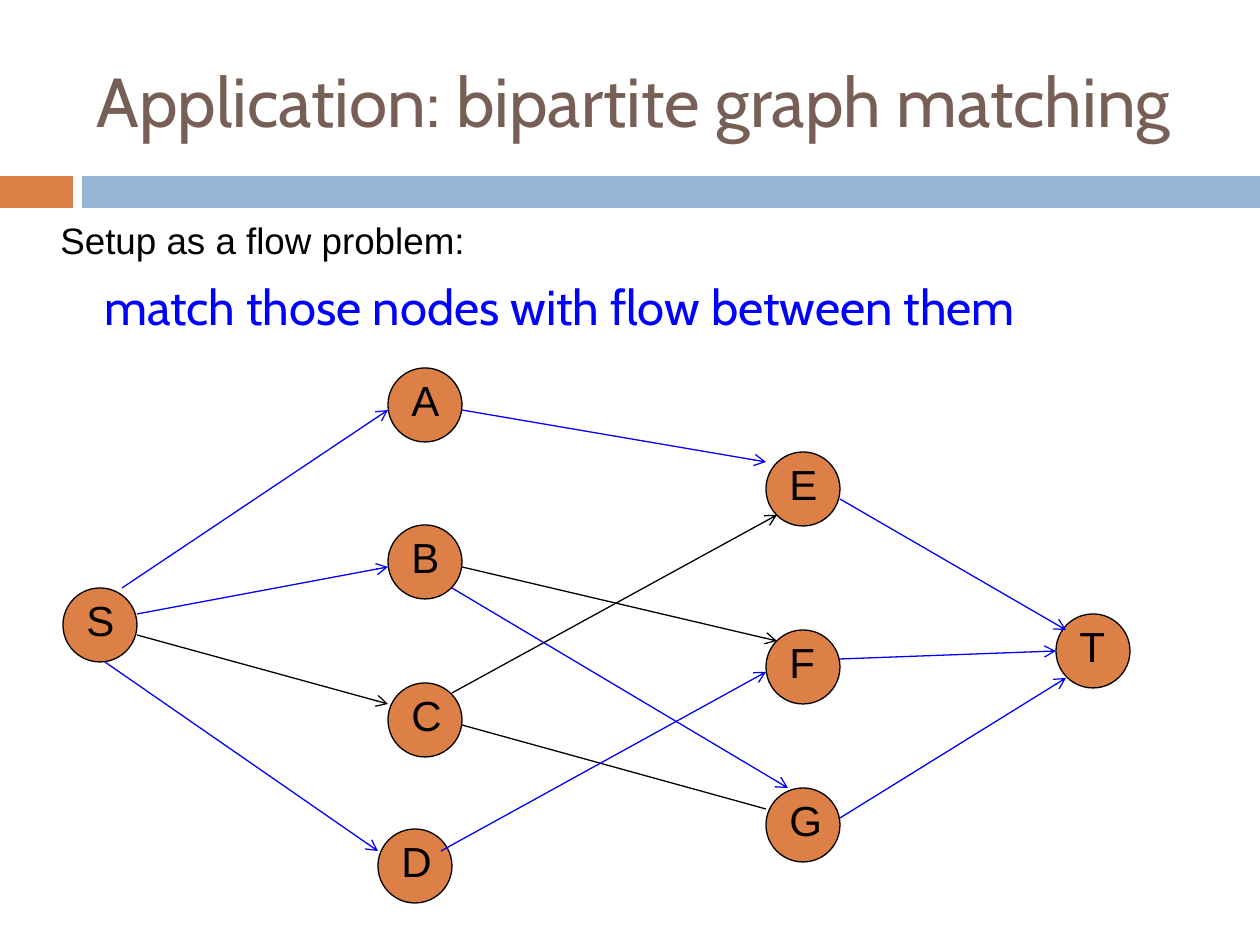
from pptx import Presentation
from pptx.dml.color import RGBColor
from pptx.enum.shapes import MSO_CONNECTOR, MSO_SHAPE
from pptx.enum.text import MSO_ANCHOR, MSO_AUTO_SIZE, PP_ALIGN
from pptx.oxml.ns import qn
from pptx.util import Pt
from lxml import etree

PX = 7257.14  # EMU per pixel, 126 pixels to the inch
OVAL, RECTANGLE = MSO_SHAPE.OVAL, MSO_SHAPE.RECTANGLE
STRAIGHT = MSO_CONNECTOR.STRAIGHT
TOP, MIDDLE = MSO_ANCHOR.TOP, MSO_ANCHOR.MIDDLE
LEFT, NO_AUTOFIT = PP_ALIGN.LEFT, MSO_AUTO_SIZE.NONE
TITLE_ONLY = 5

COLORS = {
    "orange": "DD8047",
    "band": "94B6D2",
    "title": "775F55",
    "black": "000000",
    "flow": "0000FF",
}

NODE_SIZE, LABEL_SIZE, LABEL_INSET = 74, 63, 11
NODES = {
    "A": (388, 368), "B": (388, 525), "C": (388, 683), "D": (378, 829),
    "E": (766, 452), "F": (766, 630), "G": (766, 788),
    "S": (63, 588), "T": (1056, 614),
}

# start, end, colour, has an arrowhead
EDGES = [
    # Source to the left side
    ((122, 588), (388, 410), "flow", True),
    ((137, 614), (388, 567), "flow", True),
    ((137, 635), (388, 704), "black", True),
    ((105, 662), (378, 851), "flow", True),
    # Left side to the right side
    ((462, 410), (766, 462), "flow", True),
    ((462, 567), (777, 641), "black", True),
    ((452, 588), (788, 788), "flow", True),
    ((452, 693), (777, 515), "black", True),
    ((462, 725), (766, 809), "black", False),
    ((441, 851), (766, 672), "flow", True),
    # Right side to the sink
    ((840, 499), (1066, 630), "flow", True),
    ((840, 659), (1056, 651), "flow", True),
    ((840, 818), (1066, 678), "flow", True),
]


def px(value):
    return round(value * PX)


def color(name):
    return RGBColor.from_string(COLORS[name])


def write_text(shape, text, size, font, color_name, anchor=TOP):
    frame = shape.text_frame
    frame.word_wrap = True
    frame.auto_size = NO_AUTOFIT
    frame.vertical_anchor = anchor
    paragraph = frame.paragraphs[0]
    paragraph.alignment = LEFT
    run = paragraph.add_run()
    run.text = text
    run.font.size = Pt(size)
    run.font.name = font
    run.font.color.rgb = color(color_name)
    return paragraph


def add_text(shapes, box, text, size, font, color_name):
    text_box = shapes.add_textbox(*map(px, box))
    return write_text(text_box, text, size, font, color_name)


def add_filled(shapes, preset, box, fill, outline=None):
    shape = shapes.add_shape(preset, *map(px, box))
    shape.shadow.inherit = False
    shape.fill.solid()
    shape.fill.fore_color.rgb = color(fill)
    if outline:
        shape.line.color.rgb = color(outline)
        shape.line.width = Pt(0.75)
    else:
        shape.line.fill.background()


def add_title(slide, text):
    title = slide.shapes.title
    title.left, title.top, title.width, title.height = map(px, (84, 32, 1124, 136))
    write_text(title, text, 39.6, "Cabin", "title", MIDDLE)


def add_node(slide, name, left, top):
    shapes = slide.shapes.add_group_shape().shapes
    add_filled(shapes, OVAL, (left, top, NODE_SIZE, NODE_SIZE), "orange", "black")
    label_box = (left + LABEL_INSET, top, LABEL_SIZE, LABEL_SIZE)
    add_text(shapes, label_box, name, 24, "Arial", "black")


def add_edge(slide, start, end, color_name, arrow):
    edge = slide.shapes.add_connector(STRAIGHT, *map(px, start + end))
    edge.line.color.rgb = color(color_name)
    edge.line.width = Pt(0.75)
    if arrow:
        etree.SubElement(edge.line._get_or_add_ln(), qn("a:tailEnd"), type="arrow")
    etree.SubElement(edge._element.spPr, qn("a:effectLst"))


def main():
    presentation = Presentation()
    presentation.slide_width, presentation.slide_height = px(1260), px(945)
    slide = presentation.slides.add_slide(presentation.slide_layouts[TITLE_ONLY])

    # Title and the band under it
    add_filled(slide.shapes, RECTANGLE, (0, 176, 73, 32), "orange")
    add_filled(slide.shapes, RECTANGLE, (82, 176, 1178, 32), "band")
    add_title(slide, "Application: bipartite graph matching")

    # Statement
    setup = add_text(slide.shapes, (48, 217, 1134, 136),
                     "Setup as a flow problem:", 21, "Arial", "black")
    setup.line_spacing = 0.9
    setup.space_before = Pt(7)
    add_text(slide.shapes, (92, 270, 1089, 72),
             "match those nodes with flow between them", 28, "Cabin", "flow")

    # Flow network
    for name, (left, top) in NODES.items():
        add_node(slide, name, left, top)
    for edge in EDGES:
        add_edge(slide, *edge)

    presentation.save("out.pptx")


if __name__ == "__main__":
    main()
